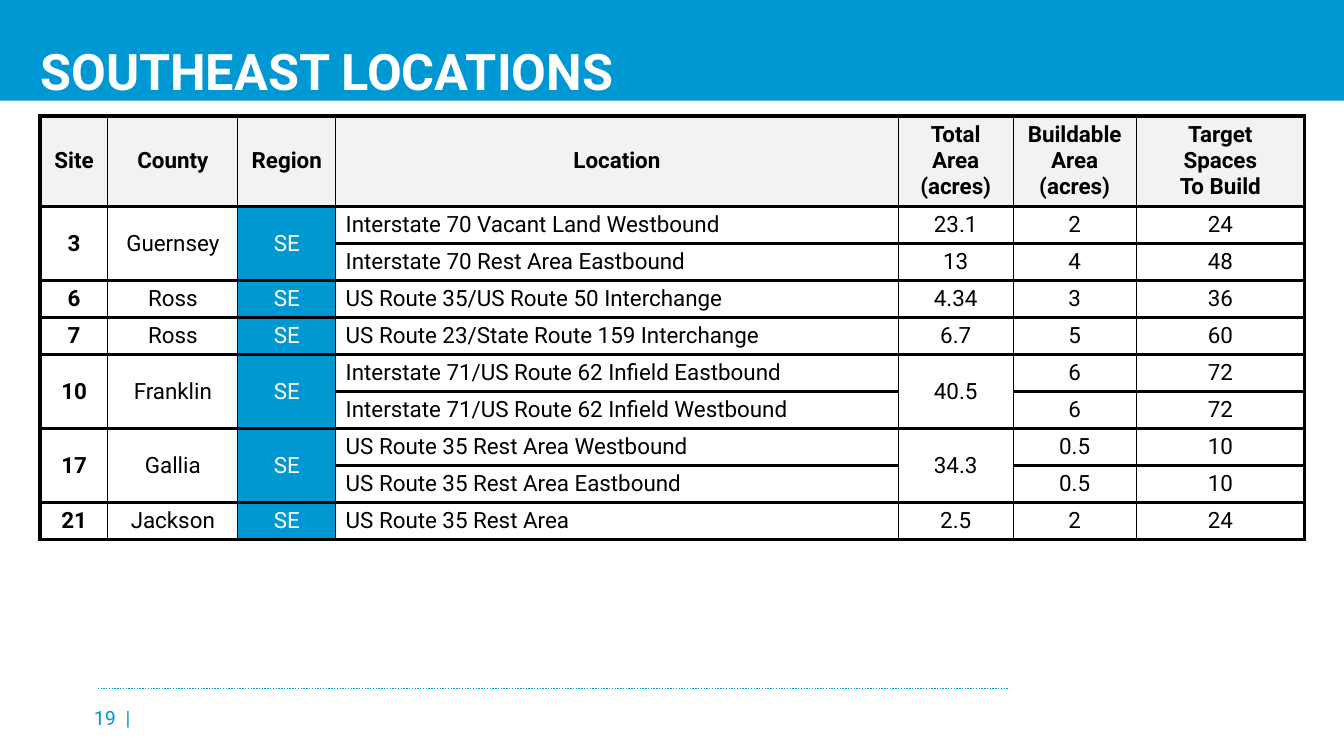
from dataclasses import dataclass

from lxml import etree
from pptx import Presentation
from pptx import util as u
from pptx.dml import color
from pptx.enum import dml, shapes, text
from pptx.oxml import ns

GRID_COLUMNS, GRID_ROWS = 1333, 750
SLIDE_WIDTH, SLIDE_HEIGHT = u.Inches(13.33), u.Inches(7.5)
BLUE, WHITE, BLACK, GREY = "0098D3", "FFFFFF", "000000", "F2F2F2"
THIN, THICK = 1, 3
LOCATION, TOTAL_AREA, REGION = 3, 4, 2
COLUMN_SPANS = (67, 129, 97, 558, 114, 122, 167)
HEADER_SPAN, BODY_SPAN = 88, 36.7
HEADERS = (
    ("Site",), ("County",), ("Region",), ("Location",),
    ("Total", "Area (acres)"), ("Buildable", "Area (acres)"),
    ("Target", "Spaces", "To Build"),
)


@dataclass(frozen=True)
class Lot:
    location: str
    total: str
    buildable: str
    spaces: str


@dataclass(frozen=True)
class Site:
    number: str
    county: str
    lots: tuple[Lot, ...]


@dataclass(frozen=True)
class Style:
    size: int
    ink: str
    bold: bool = False


SITES = (
    Site("3", "Guernsey", (
        Lot("Interstate 70 Vacant Land Westbound", "23.1", "2", "24"),
        Lot("Interstate 70 Rest Area Eastbound", "13", "4", "48"))),
    Site("6", "Ross", (Lot("US Route 35/US Route 50 Interchange", "4.34", "3", "36"),)),
    Site("7", "Ross", (Lot("US Route 23/State Route 159 Interchange", "6.7", "5", "60"),)),
    Site("10", "Franklin", (
        Lot("Interstate 71/US Route 62 Infield Eastbound", "40.5", "6", "72"),
        Lot("Interstate 71/US Route 62 Infield Westbound", "", "6", "72"))),
    Site("17", "Gallia", (
        Lot("US Route 35 Rest Area Westbound", "34.3", "0.5", "10"),
        Lot("US Route 35 Rest Area Eastbound", "", "0.5", "10"))),
    Site("21", "Jackson", (Lot("US Route 35 Rest Area", "2.5", "2", "24"),)),
)


def across(columns: float) -> int:
    return round(SLIDE_WIDTH * columns / GRID_COLUMNS)


def down(rows: float) -> int:
    return round(SLIDE_HEIGHT * rows / GRID_ROWS)


def rgb(value: str) -> color.RGBColor:
    return color.RGBColor.from_string(value)


def add_span(para, words: str, style: Style):
    span = para.add_run()
    span.text = words
    span.font.name = "Roboto"
    span.font.size = u.Pt(style.size)
    span.font.bold = style.bold
    span.font.color.rgb = rgb(style.ink)
    return span


def set_margins(frame, left: float, top: float, right: float, bottom: float) -> None:
    frame.margin_left, frame.margin_right = across(left), across(right)
    frame.margin_top, frame.margin_bottom = down(top), down(bottom)


def add_border(properties, tag: str, width: int) -> None:
    border = etree.SubElement(properties, ns.qn(f"a:{tag}"), w=str(u.Pt(width)))
    fill = etree.SubElement(border, ns.qn("a:solidFill"))
    etree.SubElement(fill, ns.qn("a:srgbClr"), val=BLACK)


def fill_cell(cell, column: int, lines: tuple[str, ...], style: Style, fill: str) -> None:
    last = len(COLUMN_SPANS) - 1
    properties = cell._tc.get_or_add_tcPr()
    add_border(properties, "lnL", THICK if column == 0 else THIN)
    add_border(properties, "lnR", THICK if column == last else THIN)
    add_border(properties, "lnT", THICK)
    add_border(properties, "lnB", THICK)
    cell.fill.solid()
    cell.fill.fore_color.rgb = rgb(fill)
    cell.vertical_anchor = text.MSO_ANCHOR.MIDDLE
    frame = cell.text_frame
    for index, line in enumerate(lines):
        para = frame.paragraphs[0] if index == 0 else frame.add_paragraph()
        left = column == LOCATION and fill == WHITE
        para.alignment = text.PP_ALIGN.LEFT if left else text.PP_ALIGN.CENTER
        add_span(para, line, style)


def body_style(column: int) -> tuple[Style, str]:
    if column == REGION:
        return Style(16, WHITE), BLUE
    return Style(16, BLACK, column == 0), WHITE


def add_sites(page) -> None:
    row_count = 1 + sum(len(site.lots) for site in SITES)
    height = HEADER_SPAN + BODY_SPAN * (row_count - 1)
    table = page.shapes.add_table(
        row_count, len(COLUMN_SPANS), across(40), down(115),
        across(sum(COLUMN_SPANS)), down(height)).table
    table.first_row = table.horz_banding = False
    for column, span in zip(table.columns, COLUMN_SPANS):
        column.width = across(span)
    for index, row in enumerate(table.rows):
        row.height = down(BODY_SPAN if index else HEADER_SPAN)
    for column, lines in enumerate(HEADERS):
        fill_cell(table.cell(0, column), column, lines, Style(16, BLACK, True), GREY)
    first = 1
    for site in SITES:
        for offset, lot in enumerate(site.lots):
            shared = (site.number, site.county, "SE") if offset == 0 else ("", "", "")
            values = (*shared, lot.location, lot.total, lot.buildable, lot.spaces)
            for column, value in enumerate(values):
                style, fill = body_style(column)
                lines = (value,) if value else ()
                fill_cell(table.cell(first + offset, column), column, lines, style, fill)
        final = first + len(site.lots) - 1
        if final > first:
            merged = [0, 1, REGION]
            if not site.lots[-1].total:
                merged.append(TOTAL_AREA)
            for column in merged:
                table.cell(first, column).merge(table.cell(final, column))
        first = final + 1


def add_footer(page) -> None:
    box = page.shapes.add_textbox(across(93), down(692), across(52), down(40))
    frame = box.text_frame
    frame.word_wrap = False
    frame.vertical_anchor = text.MSO_ANCHOR.MIDDLE
    set_margins(frame, 0, 0, 0, 0)
    para = frame.paragraphs[0]
    style = Style(14, BLUE)
    add_span(para, "19", style)
    gap = add_span(para, " ", style)
    gap.font._element.set("spc", "350")
    add_span(para, "|", style)
    rule = page.shapes.add_connector(
        shapes.MSO_CONNECTOR.STRAIGHT, across(97), down(683), across(1000), down(683))
    rule.line.color.rgb = rgb(BLUE)
    rule.line.width = u.Pt(1)
    rule.line.dash_style = dml.MSO_LINE.ROUND_DOT
    etree.SubElement(rule._element.spPr, ns.qn("a:effectLst"))


def add_banner(page) -> None:
    banner = page.shapes.add_shape(
        shapes.MSO_SHAPE.RECTANGLE, 0, 0, across(GRID_COLUMNS), down(100))
    banner.shadow.inherit = False
    banner.fill.solid()
    banner.fill.fore_color.rgb = rgb(BLUE)
    banner.line.fill.background()
    frame = banner.text_frame
    frame.word_wrap = True
    frame.vertical_anchor = text.MSO_ANCHOR.BOTTOM
    set_margins(frame, 40, 10, 40, 0)
    para = frame.paragraphs[0]
    para.alignment = text.PP_ALIGN.LEFT
    add_span(para, "SOUTHEAST LOCATIONS", Style(36, WHITE, True))


def main() -> None:
    deck = Presentation()
    deck.slide_width, deck.slide_height = SLIDE_WIDTH, SLIDE_HEIGHT
    page = deck.slides.add_slide(deck.slide_layouts[6])
    add_footer(page)
    add_banner(page)
    add_sites(page)
    deck.save("out.pptx")


if __name__ == "__main__":
    main()
